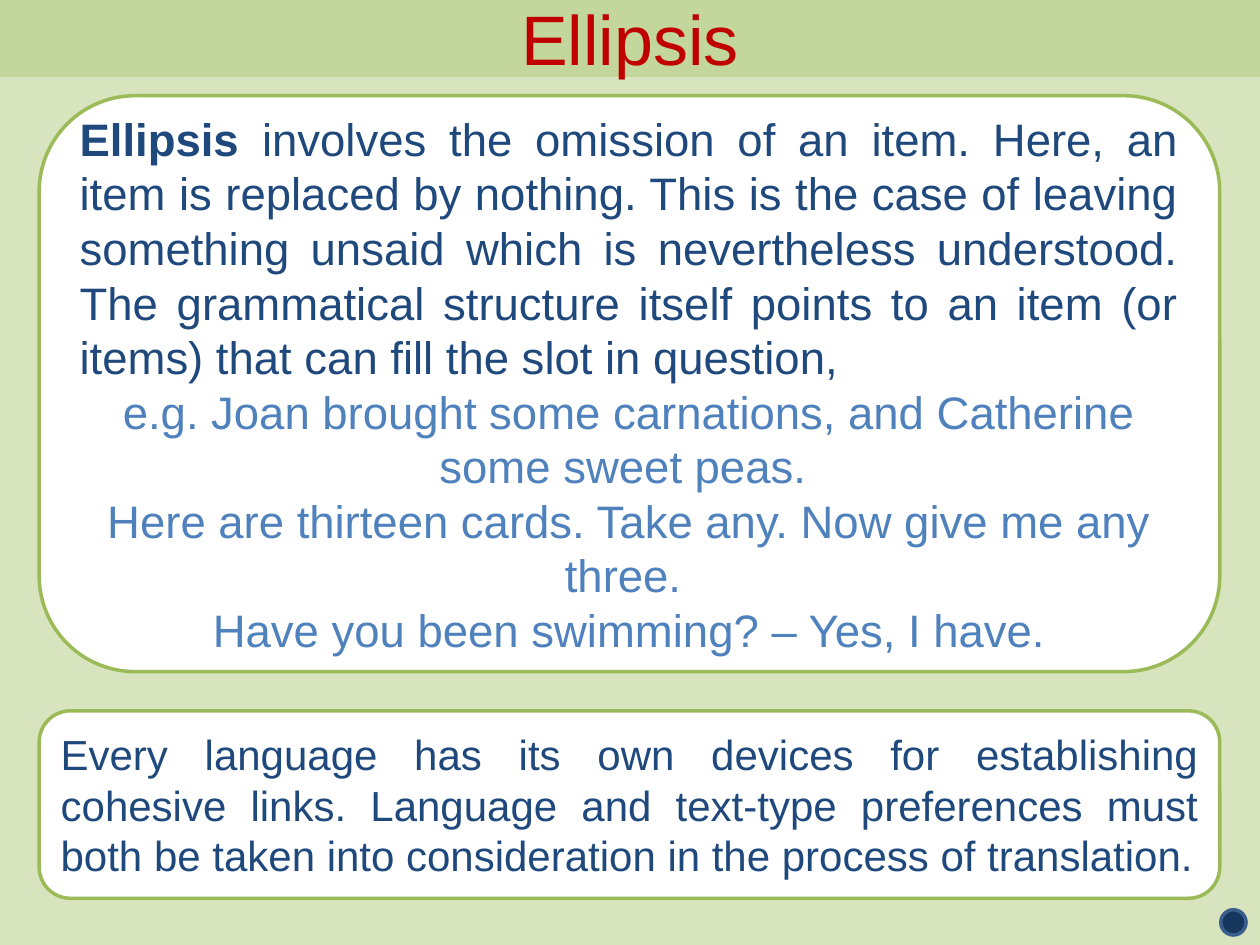
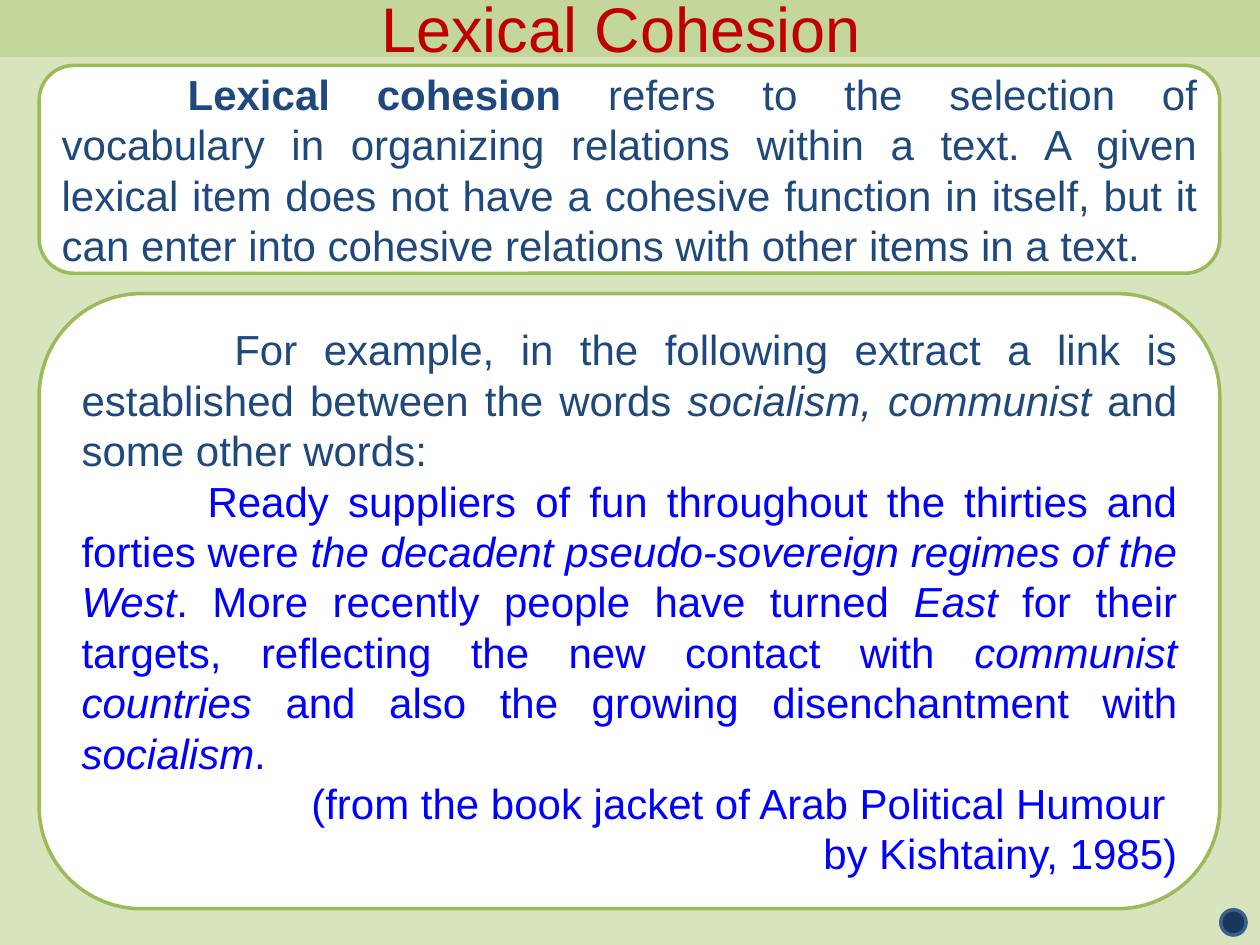
from pptx import Presentation
from pptx.dml.color import RGBColor
from pptx.enum.shapes import MSO_SHAPE as Shape
from pptx.enum.text import MSO_ANCHOR as Anchor, PP_ALIGN as Align
from pptx.util import Cm, Pt

PALE_GREEN = RGBColor(0xD7, 0xE4, 0xBD)
BAND_GREEN = RGBColor(0xC3, 0xD6, 0x9B)
EDGE_GREEN = RGBColor(0x9B, 0xBB, 0x59)
WHITE = RGBColor(0xFF, 0xFF, 0xFF)
TITLE_RED = RGBColor(0xC0, 0x00, 0x00)
NAVY = RGBColor(0x1F, 0x49, 0x7D)
EXAMPLE_BLUE = RGBColor(0x4F, 0x81, 0xBD)
QUOTE_BLUE = RGBColor(0x00, 0x00, 0xFF)
DOT_FILL = RGBColor(0x17, 0x37, 0x5E)
DOT_EDGE = RGBColor(0x3A, 0x5F, 0x8C)

WIDTH, HEIGHT = 25.4, 19.05
PANEL_LEFT, PANEL_WIDTH = 0.79, 23.8
DOT_LEFT, DOT_TOP, DOT_SIZE = 24.61, 18.34, 0.51
FONT = "Arial"


class LessonDeck:
    def __init__(self):
        self.deck = Presentation()
        self.deck.slide_width, self.deck.slide_height = Cm(WIDTH), Cm(HEIGHT)
        self.page = None

    def start_page(self, title, band_height, title_size):
        """Open a page with its background, title band and corner dot."""
        self.page = self.deck.slides.add_slide(self.deck.slide_layouts[6])
        background = self.page.background.fill
        background.solid()
        background.fore_color.rgb = PALE_GREEN
        band = self.shape(Shape.RECTANGLE, 0, 0, WIDTH, band_height, BAND_GREEN, BAND_GREEN)
        self.paragraph(band, [title], title_size, TITLE_RED, Align.CENTER)
        self.shape(Shape.OVAL, DOT_LEFT, DOT_TOP, DOT_SIZE, DOT_SIZE, DOT_FILL, DOT_EDGE)

    def shape(self, kind, left, top, width, height, fill, edge):
        box = self.page.shapes.add_shape(kind, Cm(left), Cm(top), Cm(width), Cm(height))
        box.shadow.inherit = False
        box.fill.solid()
        box.fill.fore_color.rgb = fill
        box.line.color.rgb = edge
        box.line.width = Pt(2)
        box.text_frame.word_wrap = True
        box.text_frame.vertical_anchor = Anchor.MIDDLE
        return box

    def panel(self, top, height):
        return self.shape(Shape.ROUNDED_RECTANGLE, PANEL_LEFT, top, PANEL_WIDTH, height,
                          WHITE, EDGE_GREEN)

    def paragraph(self, box, spans, size, color, align=Align.JUSTIFY, indent=0):
        """Add a paragraph; a span is plain text or a (text, "bold" or "italic") pair."""
        frame = box.text_frame
        para = frame.paragraphs[0] if not frame.text else frame.add_paragraph()
        para.alignment = align
        if indent:
            para._p.get_or_add_pPr().set("indent", str(Cm(indent)))
        for part in spans:
            text, style = (part, None) if isinstance(part, str) else part
            span = para.add_run()
            span.text = text
            span.font.name = FONT
            span.font.size = Pt(size)
            span.font.color.rgb = color
            span.font.bold = style == "bold"
            span.font.italic = style == "italic"


def build_ellipsis(lesson):
    lesson.start_page("Ellipsis", 1.52, 40)
    definition = lesson.panel(1.93, 11.61)
    lesson.paragraph(definition, [
        ("Ellipsis", "bold"),
        " involves the omission of an item. Here, an item is replaced by nothing. "
        "This is the case of leaving something unsaid which is nevertheless understood. "
        "The grammatical structure itself points to an item (or items) that can fill "
        "the slot in question,",
    ], 26, NAVY)
    for example in (
        "e.g. Joan brought some carnations, and Catherine some sweet peas. ",
        "Here are thirteen cards. Take any. Now give me any three. ",
        "Have you been swimming? – Yes, I have.",
    ):
        lesson.paragraph(definition, [example], 26, EXAMPLE_BLUE, Align.CENTER)

    conclusion = lesson.panel(14.33, 3.78)
    lesson.paragraph(conclusion, [
        "Every language has its own devices for establishing cohesive links. Language and "
        "text-type preferences must both be taken into consideration in the process of "
        "translation.",
    ], 24, NAVY)


def build_lexical_cohesion(lesson):
    lesson.start_page("Lexical Cohesion ", 1.12, 36)
    definition = lesson.panel(1.32, 4.19)
    lesson.paragraph(definition, [
        ("Lexical cohesion ", "bold"),
        "refers to the selection of vocabulary in organizing relations within a text. "
        "A given lexical item does not have a cohesive function in itself, but it can "
        "enter into cohesive relations with other items in a text. ",
    ], 24, NAVY, indent=2.54)

    extract = lesson.panel(5.92, 12.4)
    lesson.paragraph(extract, [
        "For example, in the following extract a link is established between the words ",
        ("socialism, communist", "italic"),
        " and some other words: ",
    ], 24, NAVY, indent=3.08)
    lesson.paragraph(extract, [
        "Ready suppliers of fun throughout the thirties and forties were ",
        ("the decadent pseudo-sovereign regimes of the West", "italic"),
        ". More recently people have turned ",
        ("East", "italic"),
        " for their targets, reflecting the new contact with ",
        ("communist countries", "italic"),
        " and also the growing disenchantment with ",
        ("socialism", "italic"),
        ".",
    ], 24, QUOTE_BLUE, indent=2.54)
    for credit in ("(from the book jacket of Arab Political Humour ", "by Kishtainy, 1985)"):
        lesson.paragraph(extract, [credit], 24, QUOTE_BLUE, Align.RIGHT)


def main():
    lesson = LessonDeck()
    build_ellipsis(lesson)
    build_lexical_cohesion(lesson)
    lesson.deck.save("out.pptx")


if __name__ == "__main__":
    main()
